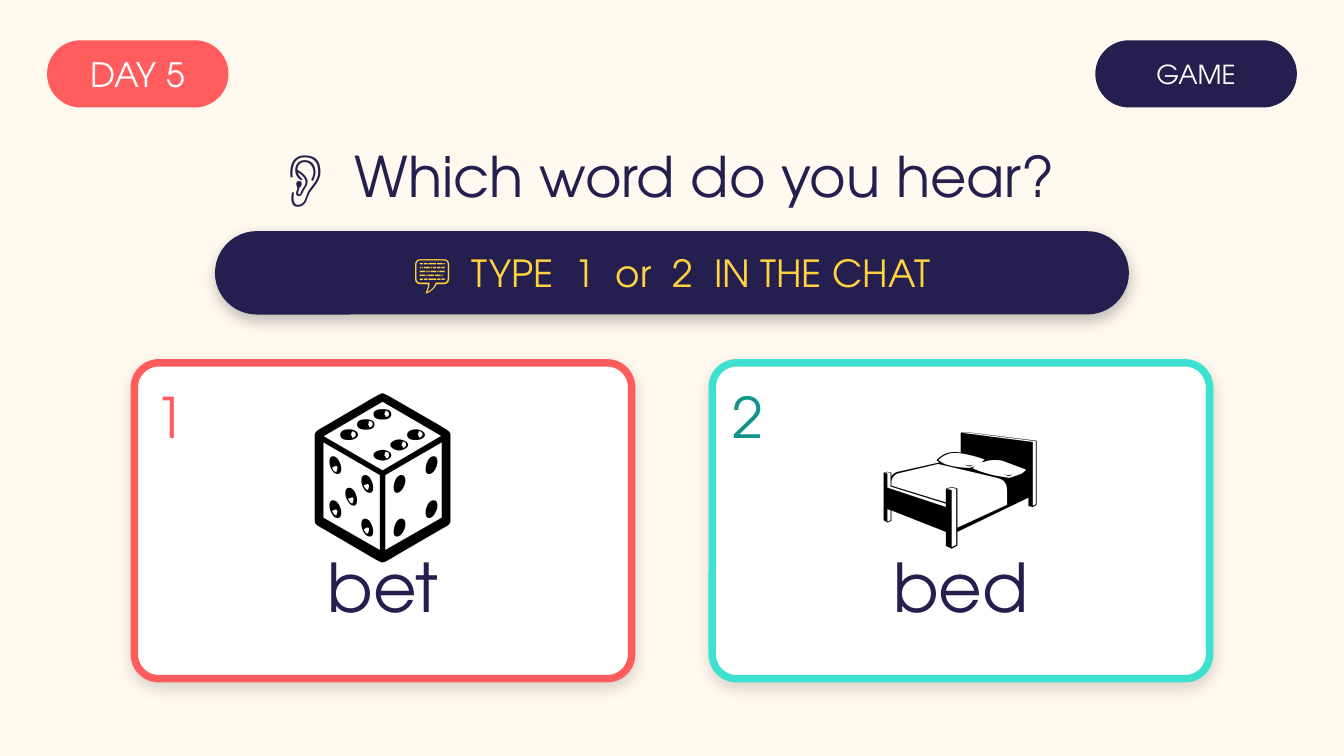
from lxml import etree
from pptx import Presentation
from pptx.dml.color import RGBColor
from pptx.enum import shapes, text as t
from pptx.oxml import ns
from pptx.util import Pt

CREAM = RGBColor(0xFF, 0xF9, 0xEF)
CORAL = RGBColor(0xFF, 0x5D, 0x5D)
NAVY = RGBColor(0x24, 0x1F, 0x4E)
YELLOW = RGBColor(0xFF, 0xD2, 0x3F)
TURQUOISE = RGBColor(0x3E, 0xE0, 0xCF)
TEAL = RGBColor(0x0E, 0x94, 0x88)
WHITE = RGBColor(0xFF, 0xFF, 0xFF)
BLACK = RGBColor(0, 0, 0)

deck = Presentation()
deck.slide_width, deck.slide_height = Pt(720), Pt(405)
page = deck.slides.add_slide(deck.slide_layouts[6])
page.background.fill.solid()
page.background.fill.fore_color.rgb = CREAM


def add_text(*pieces, area, size, color, font="TeX Gyre Adventor",
             align=t.PP_ALIGN.CENTER, anchor=t.MSO_ANCHOR.MIDDLE, inset=True):
    """Write the pieces on one line, with a double-width space between them."""
    box = page.shapes.add_textbox(*map(Pt, area))
    frame = box.text_frame
    frame.word_wrap = True
    frame.vertical_anchor = anchor
    if not inset:
        frame.margin_left = frame.margin_right = 0
        frame.margin_top = frame.margin_bottom = 0
    para = frame.paragraphs[0]
    para.alignment = align
    for index, piece in enumerate(pieces):
        for words in ([" ", piece] if index else [piece]):
            span = para.add_run()
            span.text = words
            span.font.name = font
            span.font.size = Pt(size)
            span.font.color.rgb = color
            if words == " ":
                # Letter spacing in hundredths of a point
                span.font._element.set("spc", str(size * 28))


def add_panel(area, fill, rounding=0.5, border=None, shadow=0):
    """Draw a rounded panel; shadow is its opacity in percent."""
    panel = page.shapes.add_shape(
        shapes.MSO_SHAPE.ROUNDED_RECTANGLE, *map(Pt, area))
    panel.adjustments[0] = rounding
    panel.fill.solid()
    panel.fill.fore_color.rgb = fill
    if border is None:
        panel.line.fill.background()
    else:
        panel.line.color.rgb = border
        panel.line.width = Pt(4)
    panel.shadow.inherit = False
    if shadow:
        effects = panel._element.spPr.find(ns.qn("a:effectLst"))
        outer = etree.SubElement(
            effects, ns.qn("a:outerShdw"), blurRad=str(Pt(8)),
            dist=str(Pt(3)), dir="5400000", algn="bl", rotWithShape="0")
        tint = etree.SubElement(outer, ns.qn("a:srgbClr"), val=str(BLACK))
        etree.SubElement(tint, ns.qn("a:alpha"), val=str(shadow * 1000))


# Corner badges
for label, left, width, size, fill in (
        ("DAY 5", 25.2, 97.2, 18, CORAL), ("GAME", 586.8, 108, 14, NAVY)):
    badge = (left, 21.6, width, 36)
    add_panel(badge, fill)
    add_text(label, area=badge, size=size, color=WHITE, inset=False)

# Question and instruction
add_text("👂", "Which word do you hear?",
         area=(0, 68.4, 720, 50.4), size=30, color=NAVY)
banner = (115.2, 123.84, 489.6, 44.64)
add_panel(banner, NAVY, shadow=25)
add_text("💬", "TYPE", "1", "or", "2", "IN THE CHAT",
         area=banner, size=20, color=YELLOW, inset=False)

# Answer cards
CARD_WIDTH, CARD_STEP = 266.4, 309.6
cards = (("🎲", "bet", CORAL, CORAL), ("🛏️", "bed", TURQUOISE, TEAL))
for index, (symbol, word, border, accent) in enumerate(cards):
    left = 72 + index * CARD_STEP
    add_panel((left, 194.4, CARD_WIDTH, 169.2), WHITE,
              rounding=0.077, border=border, shadow=15)
    add_text(str(index + 1), area=(left + 10.8, 201.6, 57.6, 43.2), size=30,
             color=accent, align=t.PP_ALIGN.LEFT, inset=False)
    add_text(symbol, area=(left, 178.56, CARD_WIDTH, 108), size=103,
             color=BLACK, font="Calibri", anchor=t.MSO_ANCHOR.TOP)
    add_text(word, area=(left, 291.6, CARD_WIDTH, 44.64), size=36, color=NAVY)

deck.save("out.pptx")
